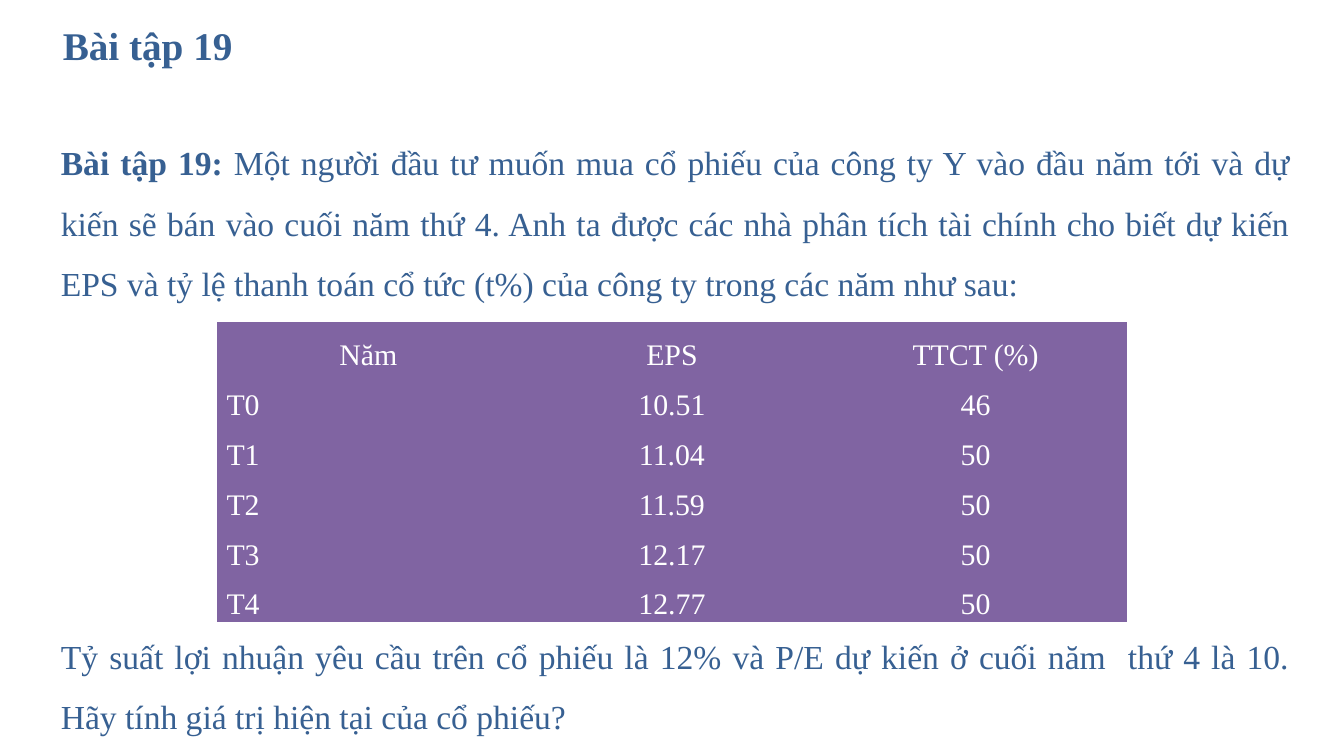
from lxml import etree
from pptx import Presentation
from pptx.dml.color import RGBColor
from pptx.enum import text
from pptx.oxml.ns import qn
from pptx.util import Pt

BLUE = RGBColor(0x37, 0x60, 0x92)
PURPLE = RGBColor(0x80, 0x64, 0xA2)
WHITE = RGBColor(0xFF, 0xFF, 0xFF)
FONT = "Times New Roman"
LEFT, CENTER, JUSTIFY = (text.PP_ALIGN.LEFT, text.PP_ALIGN.CENTER,
                         text.PP_ALIGN.JUSTIFY)

TITLE = "Bài tập 19"
LABEL = "Bài tập 19: "
PROBLEM = ("Một người đầu tư muốn mua cổ phiếu của công ty Y vào đầu năm tới "
           "và dự kiến sẽ bán vào cuối năm thứ 4. Anh ta được các nhà phân "
           "tích tài chính cho biết dự kiến EPS và tỷ lệ thanh toán cổ tức "
           "(t%) của công ty trong các năm như sau:")
QUESTION = ("Tỷ suất lợi nhuận yêu cầu trên cổ phiếu là 12% và P/E dự kiến ở "
            "cuối năm  thứ 4 là 10. Hãy tính giá trị hiện tại của cổ phiếu?")
ROWS = [
    ("Năm", "EPS", "TTCT (%)"),
    ("T0", "10.51", "46"),
    ("T1", "11.04", "50"),
    ("T2", "11.59", "50"),
    ("T3", "12.17", "50"),
    ("T4", "12.77", "50"),
]


def style(paragraph, size, color, alignment):
    paragraph.alignment = alignment
    paragraph.font.name = FONT
    paragraph.font.size = Pt(size)
    paragraph.font.color.rgb = color


def add_text_frame(slide, left, top, width, height):
    box = slide.shapes.add_textbox(Pt(left), Pt(top), Pt(width), Pt(height))
    frame = box.text_frame
    frame.word_wrap = True
    frame.margin_left = frame.margin_right = Pt(5.4)
    frame.margin_top = frame.margin_bottom = Pt(2.7)
    return frame


def add_title(slide, left, top, width, height):
    frame = add_text_frame(slide, left, top, width, height)
    frame.vertical_anchor = text.MSO_ANCHOR.MIDDLE
    paragraph = frame.paragraphs[0]
    paragraph.text = TITLE
    style(paragraph, 21, BLUE, LEFT)
    paragraph.font.bold = True


def add_exercise(slide, left, top, width, height, table_gap):
    frame = add_text_frame(slide, left, top, width, height)
    problem, question = frame.paragraphs[0], frame.add_paragraph()
    for paragraph in (problem, question):
        style(paragraph, 18, BLUE, JUSTIFY)
        paragraph.line_spacing = 1.5

    # Problem statement with a bold label
    label = problem.add_run()
    label.text = LABEL
    label.font.bold = True
    problem.add_run().text = PROBLEM

    # Question below the table
    question.add_run().text = QUESTION
    question.space_before = Pt(table_gap)


def remove_borders(cell):
    properties = cell._tc.get_or_add_tcPr()
    for index, side in enumerate(("a:lnL", "a:lnR", "a:lnT", "a:lnB")):
        line = etree.Element(qn(side), w="0")
        etree.SubElement(line, qn("a:noFill"))
        properties.insert(index, line)


def add_forecast_table(slide, left, top, width, height):
    table = slide.shapes.add_table(len(ROWS), len(ROWS[0]), Pt(left), Pt(top),
                                   Pt(width), Pt(height)).table
    table.first_row = table.horz_banding = False
    row_height = height / len(ROWS)
    for row in table.rows:
        row.height = Pt(row_height)
    for row_index, values in enumerate(ROWS):
        for column_index, value in enumerate(values):
            cell = table.cell(row_index, column_index)
            cell.fill.solid()
            cell.fill.fore_color.rgb = PURPLE
            remove_borders(cell)
            cell.margin_left = cell.margin_right = Pt(5.4)
            cell.margin_top = cell.margin_bottom = 0
            paragraph = cell.text_frame.paragraphs[0]
            paragraph.text = value
            is_year = row_index > 0 and column_index == 0
            style(paragraph, 16, WHITE, JUSTIFY if is_year else CENTER)
            # One exact line fills the row
            paragraph.line_spacing = Pt(row_height)


def main():
    presentation = Presentation()
    presentation.slide_width = Pt(720)
    presentation.slide_height = Pt(405)
    slide = presentation.slides.add_slide(presentation.slide_layouts[6])

    add_title(slide, 28.2, 1.5, 677, 44.5)
    add_exercise(slide, 27.2, 62.6, 669.6, 312.5, table_gap=167.4)
    add_forecast_table(slide, 116, 172.6, 488, 160.2)

    presentation.save("out.pptx")


if __name__ == "__main__":
    main()
